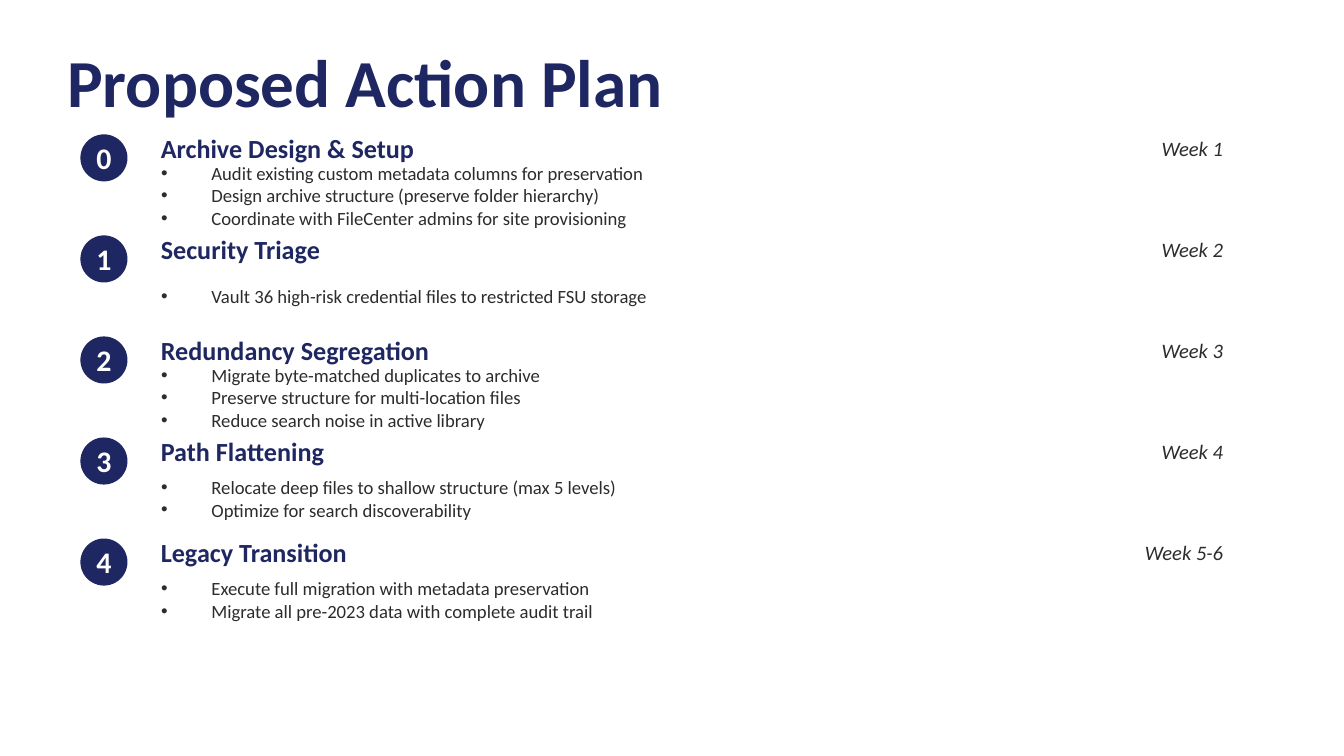
from pptx import Presentation
from pptx.dml.color import RGBColor
from pptx.enum.shapes import MSO_SHAPE
from pptx.enum.text import MSO_ANCHOR, MSO_AUTO_SIZE, PP_ALIGN
from pptx.util import Cm, Pt

OVAL = MSO_SHAPE.OVAL
MIDDLE = MSO_ANCHOR.MIDDLE
NO_AUTOFIT = MSO_AUTO_SIZE.NONE
LEFT, CENTER, RIGHT = PP_ALIGN.LEFT, PP_ALIGN.CENTER, PP_ALIGN.RIGHT

FONT = "Calibri"
NAVY, CHARCOAL, WHITE = "1E2761", "2C2C2C", "FFFFFF"

FIRST_PHASE_TOP = 2.54
PHASE_PITCH = 1.91
TEXT_LEFT = 2.79
HEADING_HEIGHT = 0.51
TASKS_OFFSET = 0.64
BADGE_SIZE = 0.89

PHASES = [
    ("Archive Design & Setup", "Week 1", [
        "Audit existing custom metadata columns for preservation",
        "Design archive structure (preserve folder hierarchy)",
        "Coordinate with FileCenter admins for site provisioning",
    ]),
    ("Security Triage", "Week 2", [
        "Vault 36 high-risk credential files to restricted FSU storage",
    ]),
    ("Redundancy Segregation", "Week 3", [
        "Migrate byte-matched duplicates to archive",
        "Preserve structure for multi-location files",
        "Reduce search noise in active library",
    ]),
    ("Path Flattening", "Week 4", [
        "Relocate deep files to shallow structure (max 5 levels)",
        "Optimize for search discoverability",
    ]),
    ("Legacy Transition", "Week 5-6", [
        "Execute full migration with metadata preservation",
        "Migrate all pre-2023 data with complete audit trail",
    ]),
]


def color(hex_string):
    return RGBColor.from_string(hex_string)


def place(shape, left, top, width, height):
    """Position a shape, with all lengths in centimetres."""
    shape.left, shape.top = Cm(left), Cm(top)
    shape.width, shape.height = Cm(width), Cm(height)


def write_lines(shape, lines, size, hex_string, bold=False, italic=False,
                alignment=LEFT):
    """Write one paragraph per line, vertically centred in the shape."""
    frame = shape.text_frame
    frame.word_wrap = True
    frame.auto_size = NO_AUTOFIT
    frame.vertical_anchor = MIDDLE
    for index, line in enumerate(lines):
        paragraph = frame.add_paragraph() if index else frame.paragraphs[0]
        paragraph.alignment = alignment
        paragraph.space_before = Pt(0)
        run = paragraph.add_run()
        run.text = line
        run.font.name = FONT
        run.font.size = Pt(size)
        run.font.bold = bold
        run.font.italic = italic
        run.font.color.rgb = color(hex_string)


def remove_insets(shape):
    frame = shape.text_frame
    frame.margin_left = frame.margin_right = Cm(0)
    frame.margin_top = frame.margin_bottom = Cm(0)


def add_title(slide, text):
    title = slide.shapes.title
    place(title, 1.27, 0.76, 22.86, 1.52)
    remove_insets(title)
    write_lines(title, [text], 36, NAVY, bold=True)


def add_badge(slide, number, top):
    badge = slide.shapes.add_shape(
        OVAL, Cm(1.52), Cm(top), Cm(BADGE_SIZE), Cm(BADGE_SIZE))
    badge.shadow.inherit = False
    badge.fill.solid()
    badge.fill.fore_color.rgb = color(NAVY)
    badge.line.fill.background()
    remove_insets(badge)
    write_lines(badge, [str(number)], 16, WHITE, bold=True, alignment=CENTER)


def add_label(slide, text, left, top, width, size, hex_string, **style):
    label = slide.shapes.add_textbox(
        Cm(left), Cm(top), Cm(width), Cm(HEADING_HEIGHT))
    write_lines(label, [text], size, hex_string, **style)


def body_placeholders(slide, count):
    """Return the layout's bulleted body, repeated for each list."""
    body_layout = slide.slide_layout.placeholders[1]
    for _ in range(count - 1):
        slide.shapes.clone_placeholder(body_layout)
    return [shape for shape in slide.placeholders
            if shape.placeholder_format.idx == 1]


def add_phase(slide, number, phase, body):
    heading, week, tasks = phase
    top = FIRST_PHASE_TOP + number * PHASE_PITCH
    add_badge(slide, number, top)
    add_label(slide, heading, TEXT_LEFT, top, 13.97, 14, NAVY, bold=True)
    add_label(slide, week, 17.02, top, 6.35, 11, CHARCOAL,
              italic=True, alignment=RIGHT)
    place(body, TEXT_LEFT, top + TASKS_OFFSET, 20.57, 1.02)
    write_lines(body, tasks, 10, CHARCOAL)


def main():
    presentation = Presentation()
    presentation.slide_width = Cm(25.4)
    presentation.slide_height = Cm(14.29)
    slide = presentation.slides.add_slide(presentation.slide_layouts[1])
    add_title(slide, "Proposed Action Plan")
    bodies = body_placeholders(slide, len(PHASES))
    for number, (phase, body) in enumerate(zip(PHASES, bodies)):
        add_phase(slide, number, phase, body)
    presentation.save("out.pptx")


if __name__ == "__main__":
    main()
